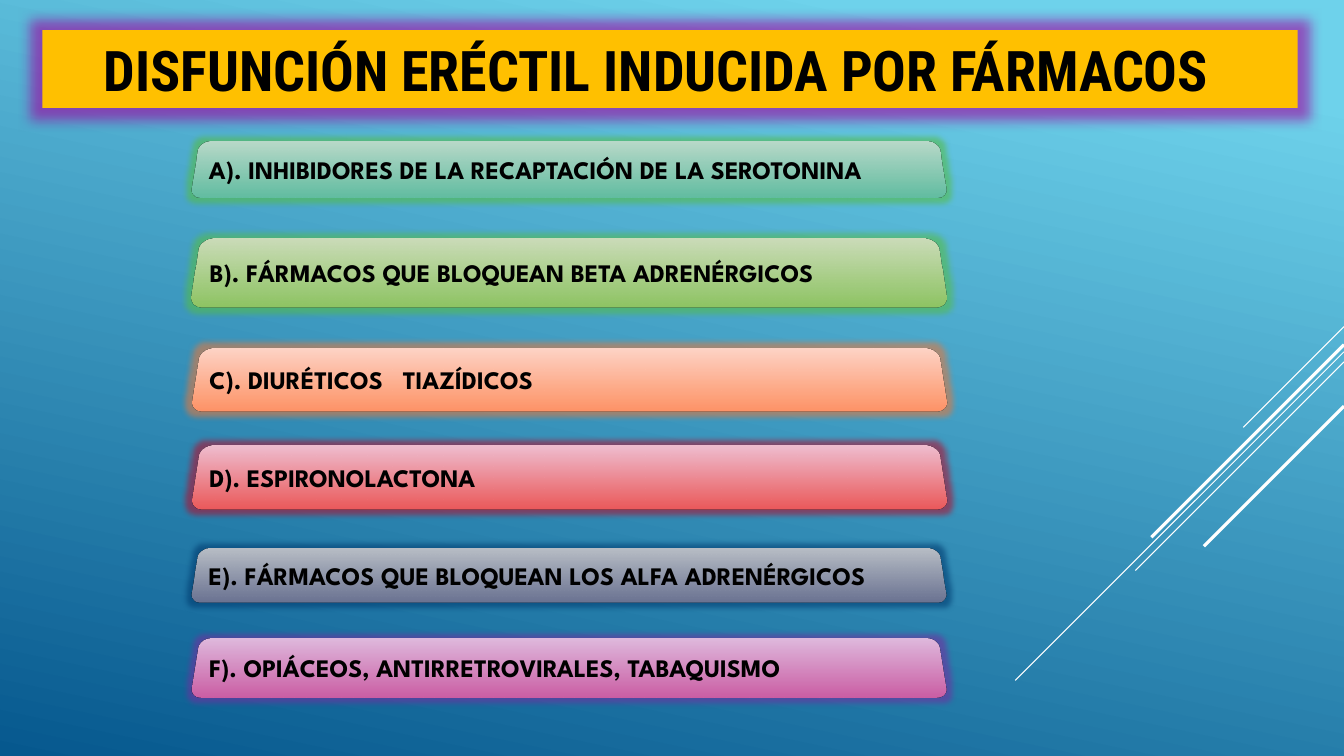
from lxml import etree
from pptx import Presentation
from pptx.dml.color import RGBColor
from pptx.enum import shapes, text
from pptx.oxml import ns
from pptx.util import Inches, Pt


class Theme:
    sky, deep = "6ED2EB", "06588E"
    gold, halo, ink, white = "FFC000", "A000A0", "000000", "FFFFFF"
    head, body = "Roboto Condensed", "League Spartan"
    big, small = Pt(40), Pt(18)


# label, top, height, light, dark, edge, glow
BARS = [
    ("A). INHIBIDORES DE LA RECAPTACIÓN DE LA SEROTONINA",
     1.34, 0.68, "B9DACA", "63BEA2", "8AB7A1", "54BC48"),
    ("B). FÁRMACOS QUE BLOQUEAN BETA ADRENÉRGICOS",
     2.29, 0.83, "CCDDBA", "8FC563", "A4BB8B", "54BC48"),
    ("C). DIURÉTICOS   TIAZÍDICOS",
     3.38, 0.77, "FFD4C6", "FF9467", "EEA78F", "E07840"),
    ("D). ESPIRONOLACTONA",
     4.35, 0.77, "F0BED0", "EC5A5B", "D68BA6", "B01030"),
    ("E). FÁRMACOS QUE BLOQUEAN LOS ALFA ADRENÉRGICOS",
     5.38, 0.65, "B8BEC6", "6C7493", "89919C", "003C70"),
    ("F). OPIÁCEOS, ANTIRRETROVIRALES, TABAQUISMO",
     6.27, 0.71, "E0BADE", "CC5FA5", "C089BD", "7030A0"),
]

# top at the right edge, run to the lower left, weight
RAYS = [(3.24, 1.0, 0.75), (3.49, 3.26, 0.75), (3.59, 2.07, 0.75),
        (3.42, 1.91, 2.25), (4.03, 1.39, 2.25)]


def rgb(code):
    return RGBColor.from_string(code)


def add(node, tag, **attrs):
    return etree.SubElement(node, ns.qn(tag), attrs)


def blend(fill, stops, angle):
    fill.gradient()
    fill.gradient_angle = angle
    for stop, (place, code) in zip(fill.gradient_stops, stops):
        stop.position = place
        stop.color.rgb = rgb(code)


def glow(shape, code, size, alpha):
    shape.shadow.inherit = False
    effects = shape._element.spPr.find(ns.qn("a:effectLst"))
    ring = add(effects, "a:glow", rad=str(Pt(size)))
    color = add(ring, "a:srgbClr", val=code)
    add(color, "a:alpha", val=str(alpha * 1000))


def tilt(shape):
    scene = add(shape._element.spPr, "a:scene3d")
    add(scene, "a:camera", prst="perspectiveRelaxedModerately")
    add(scene, "a:lightRig", rig="threePt", dir="t")


def style(par, face, size):
    par.font.name, par.font.size = face, size
    par.font.bold = True
    par.font.color.rgb = rgb(Theme.ink)


def add_ray(slide, top, run, weight):
    edge = 13.33
    ray = slide.shapes.add_connector(
        shapes.MSO_CONNECTOR.STRAIGHT, Inches(edge), Inches(top),
        Inches(edge - run), Inches(top + run))
    ray.line.color.rgb = rgb(Theme.white)
    ray.line.width = Pt(weight)
    add(ray._element.spPr, "a:effectLst")


def set_title(slide, words):
    title = slide.shapes.title
    title.left, title.top = Inches(0.42), Inches(0.3)
    title.width, title.height = Inches(12.45), Inches(0.77)
    title.fill.solid()
    title.fill.fore_color.rgb = rgb(Theme.gold)
    glow(title, Theme.halo, 18, 60)
    frame = title.text_frame
    frame.text = words
    frame.vertical_anchor = text.MSO_ANCHOR.MIDDLE
    frame.margin_right = Inches(0.38)
    par = frame.paragraphs[0]
    par.alignment = text.PP_ALIGN.CENTER
    style(par, Theme.head, Theme.big)


def add_bar(slide, label, top, height, light, dark, edge, halo):
    bar = slide.shapes.add_shape(
        shapes.MSO_SHAPE.ROUNDED_RECTANGLE, Inches(1.94), Inches(top),
        Inches(7.41), Inches(height))
    blend(bar.fill, [(0, light), (1, dark)], 270)
    bar.line.color.rgb = rgb(edge)
    bar.line.width = Pt(0.75)
    glow(bar, halo, 8, 60)
    tilt(bar)
    frame = bar.text_frame
    frame.text = label
    frame.word_wrap = True
    frame.vertical_anchor = text.MSO_ANCHOR.MIDDLE
    par = frame.paragraphs[0]
    par.alignment = text.PP_ALIGN.LEFT
    style(par, Theme.body, Theme.small)


def main():
    deck = Presentation()
    deck.slide_width, deck.slide_height = Inches(13.33), Inches(7.5)
    slide = deck.slides.add_slide(deck.slide_layouts[5])

    # Backdrop
    blend(slide.background.fill,
          [(0.1, Theme.sky), (1, Theme.deep)], 258)
    for ray in RAYS:
        add_ray(slide, *ray)

    # Heading and list of drug groups
    set_title(slide, "DISFUNCIÓN ERÉCTIL INDUCIDA POR FÁRMACOS")
    for bar in BARS:
        add_bar(slide, *bar)

    deck.save("out.pptx")


if __name__ == "__main__":
    main()
